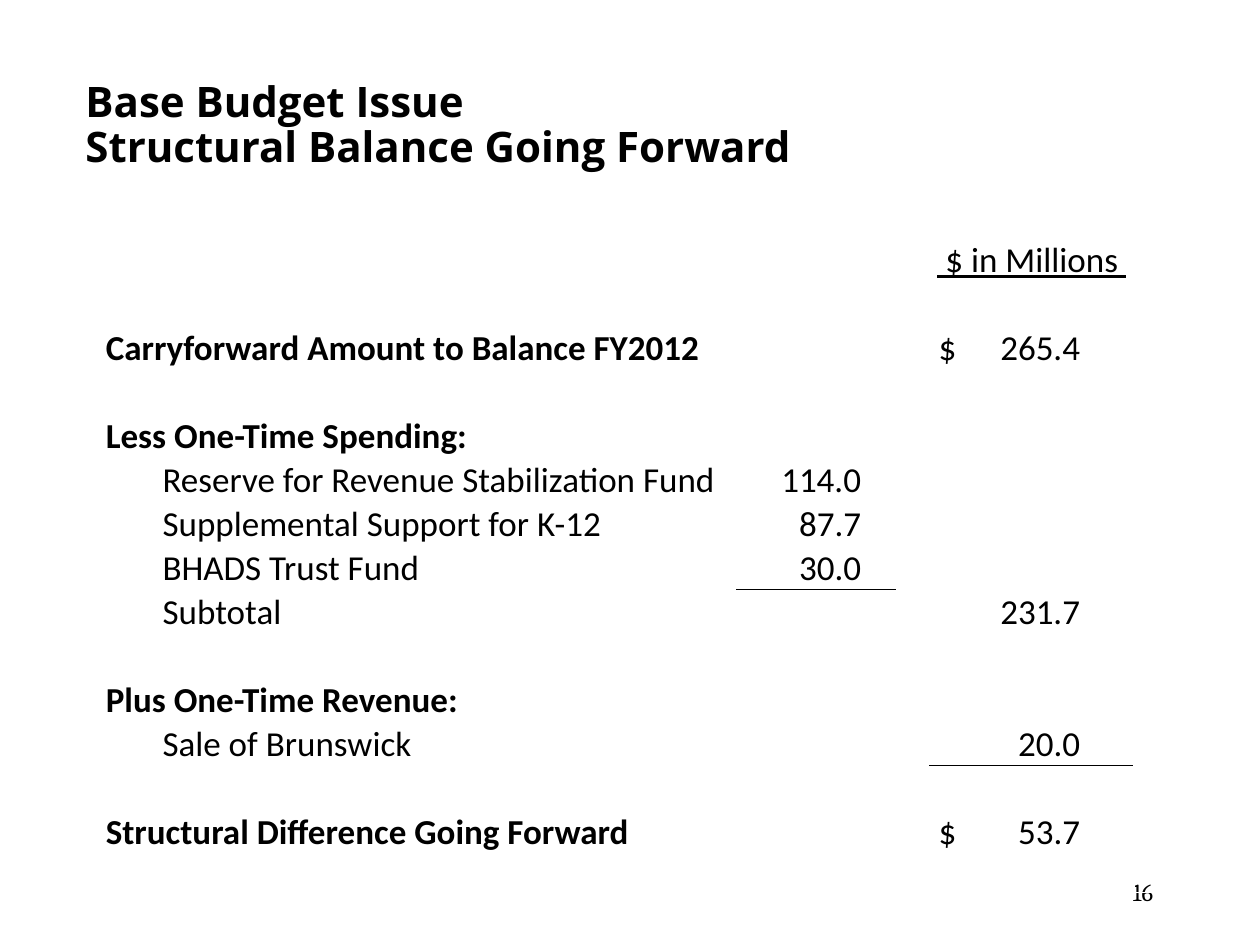
from lxml.etree import SubElement
from pptx import Presentation
from pptx.dml.color import RGBColor
from pptx.enum.text import MSO_ANCHOR as Anchor, PP_ALIGN as Align
from pptx.oxml import parse_xml
from pptx.oxml.ns import nsdecls, qn
from pptx.util import Pt

BLACK = "000000"
COLUMN_WIDTHS = [32.4, 329.04, 91.44, 18.72, 116.64, 18.72]
HEADER_HEIGHT, ROW_HEIGHT, LAST_HEIGHT = 29.5, 25.13, 14.4
HEADING, ITEM, DETAIL, TOTAL = 0, 1, 2, 4
NUMBER_ENDS = {DETAIL: 66, TOTAL: 81}
ENTRIES = {
    2: {HEADING: "Carryforward Amount to Balance FY2012", TOTAL: "$\t265.4"},
    4: {HEADING: "Less One-Time Spending:"},
    5: {ITEM: "Reserve for Revenue Stabilization Fund", DETAIL: "\t114.0"},
    6: {ITEM: "Supplemental Support for K-12", DETAIL: "\t87.7"},
    7: {ITEM: "BHADS Trust Fund", DETAIL: "\t30.0"},
    8: {ITEM: "Subtotal", TOTAL: "\t231.7"},
    10: {HEADING: "Plus One-Time Revenue:"},
    11: {ITEM: "Sale of Brunswick", TOTAL: "\t20.0"},
    13: {HEADING: "Structural Difference Going Forward", TOTAL: "$\t53.7"},
}
ROW_COUNT = 15
SUM_LINES = [(7, DETAIL), (11, TOTAL)]


def color(value):
    return RGBColor.from_string(value)


def style(para, font, size, bold=False, underline=False):
    for span in para.runs:
        span.font.name = font
        span.font.size = Pt(size)
        span.font.bold = bold
        span.font.underline = underline
        span.font.color.rgb = color(BLACK)


def add_text(page, text, left, top, width, height, font, size, bold=False,
             align=Align.LEFT, spacing=1.0):
    box = page.shapes.add_textbox(Pt(left), Pt(top), Pt(width), Pt(height))
    frame = box.text_frame
    frame.word_wrap = True
    frame.vertical_anchor = Anchor.MIDDLE
    para = frame.paragraphs[0]
    para.text = text
    para.alignment = align
    para.line_spacing = spacing
    style(para, font, size, bold)


def add_number_tab(para, position):
    tabs = SubElement(para._p.get_or_add_pPr(), qn("a:tabLst"))
    SubElement(tabs, qn("a:tab"), pos=str(Pt(position)), algn="r")


def add_border(cell, side):
    line = parse_xml(
        f'<a:{side} {nsdecls("a")} w="{Pt(0.5)}"><a:solidFill>'
        f'<a:srgbClr val="{BLACK}"/></a:solidFill></a:{side}>')
    cell._tc.get_or_add_tcPr().insert(0, line)


def fill_cell(cell, column, text):
    para = cell.text_frame.paragraphs[0]
    para.text = text
    if column in NUMBER_ENDS:
        add_number_tab(para, NUMBER_ENDS[column])
        cell.margin_left = Pt(5)
    style(para, "Calibri", 20, bold=column == HEADING)


def add_header(cell):
    para = cell.text_frame.paragraphs[0]
    para.text = " $ in Millions "
    para.alignment = Align.CENTER
    style(para, "Calibri", 20, underline=True)


def add_budget_table(page):
    heights = [HEADER_HEIGHT] + [ROW_HEIGHT] * (ROW_COUNT - 2) + [LAST_HEIGHT]
    frame = page.shapes.add_table(
        ROW_COUNT, len(COLUMN_WIDTHS), Pt(59.76), Pt(131.76),
        Pt(sum(COLUMN_WIDTHS)), Pt(sum(heights)))
    table = frame.table
    table.first_row = False
    table.horz_banding = False
    for column, width in zip(table.columns, COLUMN_WIDTHS):
        column.width = Pt(width)
    for row, height in zip(table.rows, heights):
        row.height = Pt(height)
    for cell in table.iter_cells():
        cell.fill.background()
        cell.vertical_anchor = Anchor.BOTTOM
        cell.margin_left = cell.margin_right = cell.margin_top = Pt(0.72)
        cell.margin_bottom = 0
    add_header(table.cell(0, TOTAL))
    for row, entry in ENTRIES.items():
        if HEADING in entry:
            table.cell(row, HEADING).merge(table.cell(row, ITEM))
        for column, text in entry.items():
            fill_cell(table.cell(row, column), column, text)
    for row, column in SUM_LINES:
        add_border(table.cell(row, column), "lnB")
        add_border(table.cell(row + 1, column), "lnT")


def main():
    deck = Presentation()
    deck.slide_width, deck.slide_height = Pt(720), Pt(540)
    page = deck.slides.add_slide(deck.slide_layouts[6])
    add_text(page, "16", 516.24, 491.76, 149.76, 36, "Cambria", 14,
             align=Align.RIGHT)
    add_text(page, "Base Budget Issue\vStructural Balance Going Forward",
             41.76, 30.24, 570.24, 84.24, "Open Sans", 24, bold=True,
             spacing=0.9)
    add_budget_table(page)
    deck.save("out.pptx")


if __name__ == "__main__":
    main()
